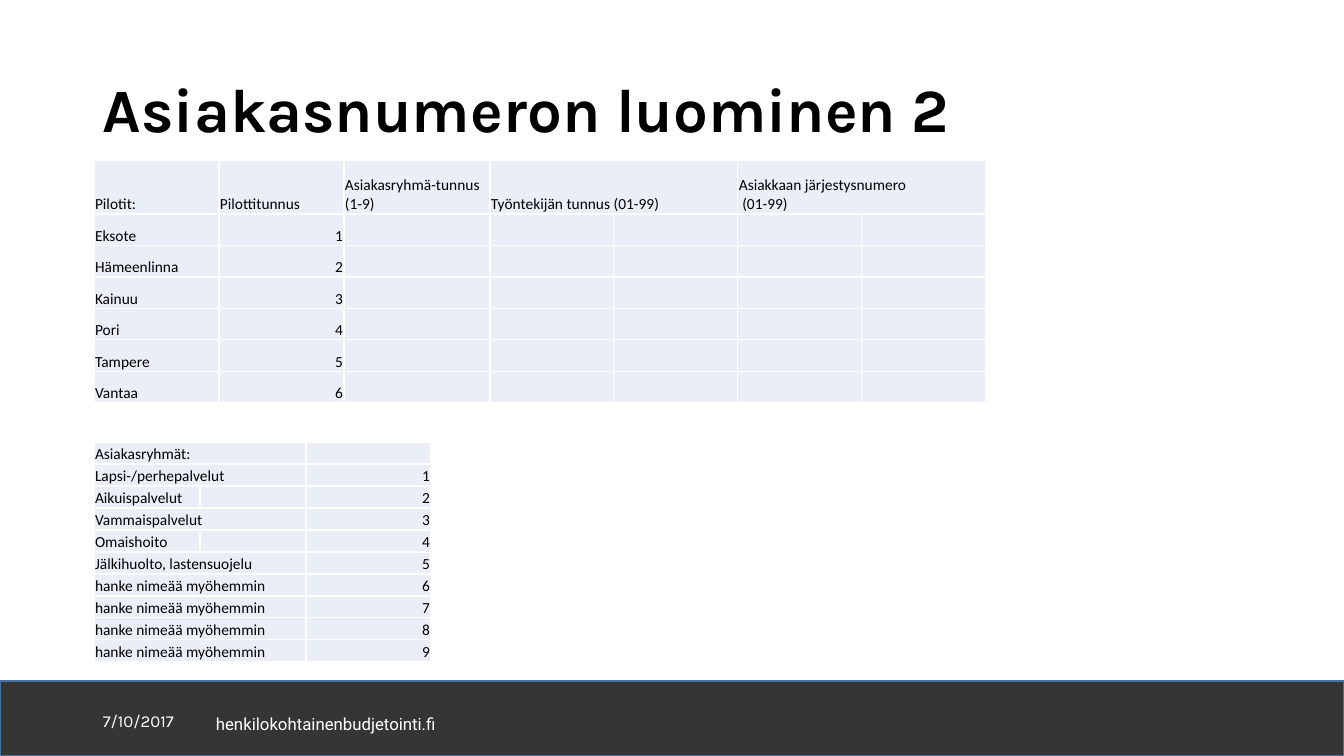
from lxml.etree import SubElement
from pptx import Presentation
from pptx.dml.color import RGBColor
from pptx.enum.shapes import MSO_SHAPE as SHAPE
from pptx.enum.text import MSO_ANCHOR as ANCHOR, PP_ALIGN as ALIGN
from pptx.oxml.ns import qn
from pptx.util import Emu, Pt

WHITE = RGBColor(0xFF, 0xFF, 0xFF)
BLACK = RGBColor(0, 0, 0)
CELL = RGBColor(0xEA, 0xEF, 0xF7)
BAR = RGBColor(0x35, 0x35, 0x33)
BAR_LINE = RGBColor(0x43, 0x73, 0x9E)

TITLE = "Asiakasnumeron luominen 2"
DATE = "7/10/2017"
SITE = "henkilokohtainenbudjetointi.fi"
PILOT_HEAD = ["Pilotit:", "Pilottitunnus", "Asiakasryhmä-tunnus (1-9)",
              "Työntekijän tunnus (01-99)", "",
              "Asiakkaan järjestysnumero \v (01-99)", ""]
PILOTS = ["Eksote", "Hämeenlinna", "Kainuu", "Pori", "Tampere", "Vantaa"]
LATER = "hanke nimeää myöhemmin"
GROUPS = ["Lapsi-/perhepalvelut", "Aikuispalvelut", "Vammaispalvelut",
          "Omaishoito", "Jälkihuolto, lastensuojelu"] + [LATER] * 4
SPLIT_GROUPS = ("Aikuispalvelut", "Omaishoito")

PILOT_COLS = [125, 125, 146] + [124] * 4
GROUP_COLS = [106, 106, 125]
HEAD_H, PILOTS_H, GROUP_H = 54, 243, 22


def px(n):
    return Emu(round(n * 914400 / 100.8))


def write(tf, text, size=11, font="Calibri", color=BLACK, bold=False,
          align=ALIGN.LEFT, spacing=None):
    p = tf.paragraphs[0]
    p.text = text
    p.alignment = align
    p.line_spacing = spacing
    for r in p.runs:
        f = r.font
        f.size, f.name, f.bold = Pt(size), font, bold
        f.color.rgb = color
    if not text:
        SubElement(p._p, qn("a:endParaRPr"), sz=str(size * 100))


def add_text(s, text, x, y, w, h, anchor=ANCHOR.MIDDLE, **style):
    tf = s.shapes.add_textbox(px(x), px(y), px(w), px(h)).text_frame
    tf.word_wrap = True
    tf.vertical_anchor = anchor
    write(tf, text, **style)


def add_borders(cell):
    pr = cell._tc.get_or_add_tcPr()
    for i, side in enumerate(("lnL", "lnR", "lnT", "lnB")):
        ln = pr.makeelement(qn("a:" + side), {"w": str(Pt(1))})
        fill = SubElement(ln, qn("a:solidFill"))
        SubElement(fill, qn("a:srgbClr"), val=str(WHITE))
        pr.insert(i, ln)


def add_table(s, rows, x, y, cols, heights, number_col, merges):
    t = s.shapes.add_table(len(rows), len(cols), px(x), px(y),
                           px(sum(cols)), px(sum(heights))).table
    t.first_row = t.horz_banding = False
    for column, w in zip(t.columns, cols):
        column.width = px(w)
    for i, (row, h) in enumerate(zip(rows, heights)):
        t.rows[i].height = px(h)
        for j, text in enumerate(row):
            c = t.cell(i, j)
            c.margin_left = c.margin_right = c.margin_top = px(1)
            c.margin_bottom = 0
            c.vertical_anchor = ANCHOR.BOTTOM
            c.fill.solid()
            c.fill.fore_color.rgb = CELL
            add_borders(c)
            number = i > 0 and j == number_col
            write(c.text_frame, text, align=ALIGN.RIGHT if number else ALIGN.LEFT)
    for i, j in merges:
        t.cell(i, j).merge(t.cell(i, j + 1))


def main():
    prs = Presentation()
    prs.slide_width, prs.slide_height = px(1344), px(756)
    s = prs.slides.add_slide(prs.slide_layouts[6])

    bar = s.shapes.add_shape(SHAPE.RECTANGLE, 0, px(681), px(1344), px(75))
    bar.shadow.inherit = False
    bar.fill.solid()
    bar.fill.fore_color.rgb = BAR
    bar.line.color.rgb = BAR_LINE
    bar.line.width = Pt(1)

    add_text(s, SITE, 206, 709, 566, 30, anchor=ANCHOR.TOP,
             size=12, font="Roboto", color=WHITE)
    add_text(s, TITLE, 93, 40, 1159, 146, size=44, font="Karla", bold=True,
             spacing=0.9)

    pilots = [PILOT_HEAD] + [[name, str(n)] + [""] * 5
                             for n, name in enumerate(PILOTS, 1)]
    pilot_h = (PILOTS_H - HEAD_H) / len(PILOTS)
    add_table(s, pilots, 94, 160, PILOT_COLS,
              [HEAD_H] + [pilot_h] * len(PILOTS), 1, [(0, 3), (0, 5)])

    add_text(s, DATE, 93, 701, 302, 40, size=12, font="Karla", color=WHITE)

    groups = [["Asiakasryhmät:", "", ""]] + [[name, "", str(n)]
                                             for n, name in enumerate(GROUPS, 1)]
    merges = [(i, 0) for i, row in enumerate(groups) if row[0] not in SPLIT_GROUPS]
    add_table(s, groups, 94, 442, GROUP_COLS, [GROUP_H] * len(groups), 2, merges)

    prs.save("out.pptx")


if __name__ == "__main__":
    main()
